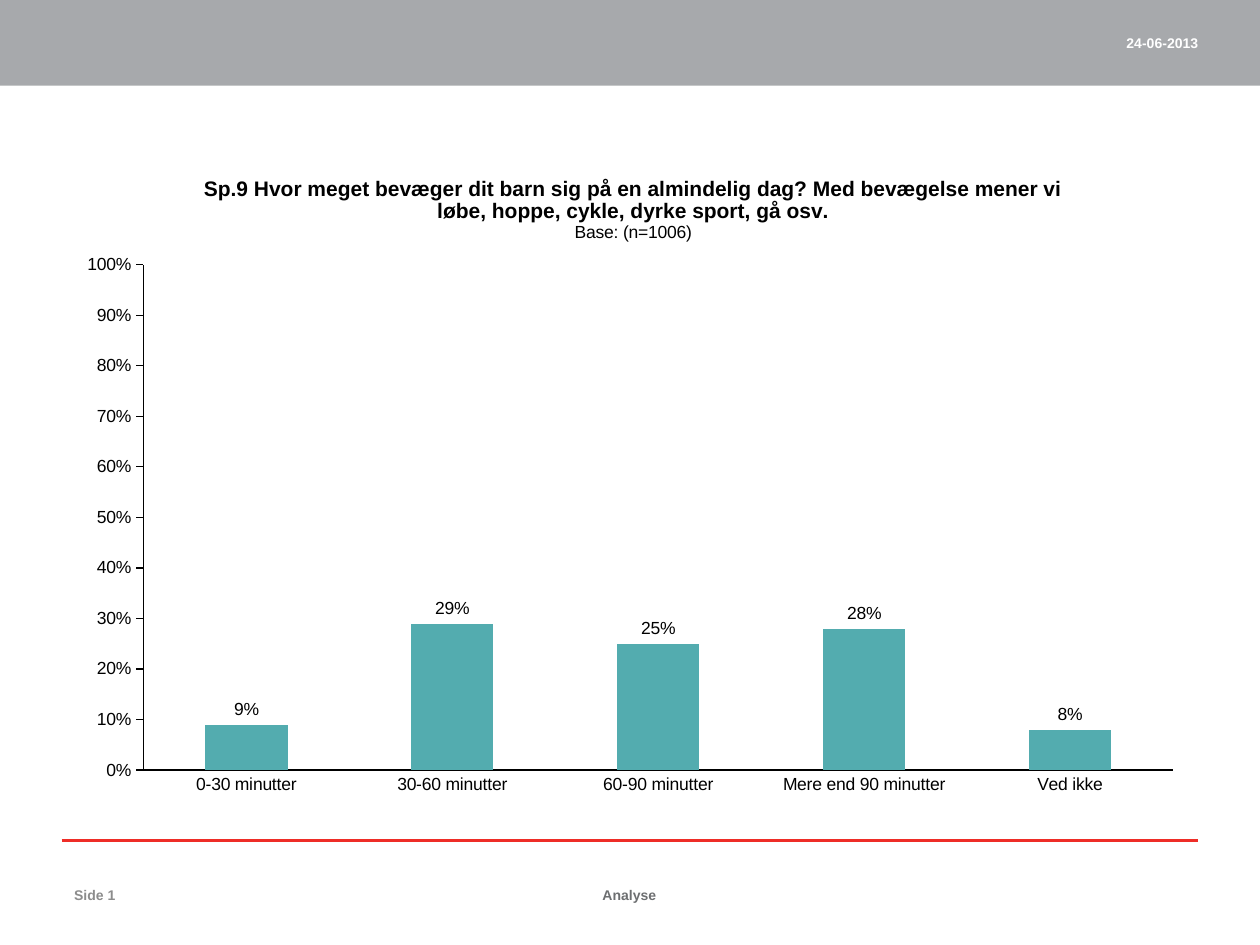
from dataclasses import dataclass

from lxml import etree
from pptx import Presentation
from pptx.chart.data import CategoryChartData
from pptx.dml.color import RGBColor
from pptx.enum.chart import XL_CHART_TYPE, XL_LABEL_POSITION, XL_TICK_MARK
from pptx.enum.shapes import MSO_CONNECTOR, MSO_SHAPE
from pptx.enum.text import MSO_ANCHOR, PP_ALIGN
from pptx.oxml.ns import qn
from pptx.util import Inches, Pt

COLUMNS = XL_CHART_TYPE.COLUMN_CLUSTERED
ABOVE_BAR = XL_LABEL_POSITION.OUTSIDE_END
NO_TICK = XL_TICK_MARK.NONE
OUTER_TICK = XL_TICK_MARK.OUTSIDE
STRAIGHT = MSO_CONNECTOR.STRAIGHT
RECTANGLE = MSO_SHAPE.RECTANGLE
MIDDLE = MSO_ANCHOR.MIDDLE
LEFT, CENTER, RIGHT = PP_ALIGN.LEFT, PP_ALIGN.CENTER, PP_ALIGN.RIGHT

BLACK = RGBColor(0x00, 0x00, 0x00)
WHITE = RGBColor(0xFF, 0xFF, 0xFF)
BAND_GRAY = RGBColor(0xA7, 0xA9, 0xAC)
RULE_RED = RGBColor(0xEE, 0x2D, 0x27)
FOOTER_GRAY = RGBColor(0x6D, 0x6F, 0x71)
PAGE_GRAY = RGBColor(0x8C, 0x8C, 0x8C)
BAR_TEAL = RGBColor(0x53, 0xAC, 0xAF)
FONT = "Arial"
PERCENT = "0%"


@dataclass(frozen=True)
class Marginal:
    text: str
    left: float
    top: float
    width: float
    color: RGBColor
    align: PP_ALIGN


@dataclass(frozen=True)
class TitleLine:
    text: str
    size: float
    bold: bool


MARGINALS = (
    Marginal("24-06-2013", 7.28, 0.14, 2.33, WHITE, RIGHT),
    Marginal("Analyse", 3.89, 6.9, 2.21, FOOTER_GRAY, CENTER),
    Marginal("Side 1", 0.49, 6.9, 2.33, PAGE_GRAY, LEFT),
)
QUESTION = (
    TitleLine("Sp.9 Hvor meget bevæger dit barn sig på en almindelig dag? "
              "Med bevægelse mener vi", 12, True),
    TitleLine("løbe, hoppe, cykle, dyrke sport, gå osv.", 12, True),
    TitleLine("Base: (n=1006)", 10, False),
)
ANSWERS = {
    "0-30 minutter": 0.09,
    "30-60 minutter": 0.29,
    "60-90 minutter": 0.25,
    "Mere end 90 minutter": 0.28,
    "Ved ikke": 0.08,
}


def style_font(font, size: float, color: RGBColor, bold: bool = False) -> None:
    font.name = FONT
    font.size = Pt(size)
    font.bold = bold
    font.color.rgb = color


def write_text(paragraph, text: str, *, size: float, color: RGBColor,
               bold: bool, align: PP_ALIGN) -> None:
    paragraph.alignment = align
    run = paragraph.add_run()
    run.text = text
    style_font(run.font, size, color, bold)


def add_marginal(slide, marginal: Marginal) -> None:
    box = slide.shapes.add_textbox(Inches(marginal.left), Inches(marginal.top),
                                   Inches(marginal.width), Inches(0.4))
    frame = box.text_frame
    frame.word_wrap = True
    frame.vertical_anchor = MIDDLE
    write_text(frame.paragraphs[0], marginal.text, size=8,
               color=marginal.color, bold=True, align=marginal.align)


def add_header_band(slide) -> None:
    band = slide.shapes.add_shape(RECTANGLE, 0, 0, Inches(10), Inches(0.68))
    band.shadow.inherit = False
    band.fill.solid()
    band.fill.fore_color.rgb = BAND_GRAY
    band.line.fill.background()


def add_footer_rule(slide) -> None:
    rule = slide.shapes.add_connector(STRAIGHT, Inches(0.49), Inches(6.67),
                                      Inches(9.51), Inches(6.67))
    rule.line.color.rgb = RULE_RED
    rule.line.width = Pt(1.5)
    etree.SubElement(rule._element.spPr, qn("a:effectLst"))


def place_part(part, index: int, **settings: object) -> None:
    for old in part.findall(qn("c:layout")):
        part.remove(old)
    layout = etree.Element(qn("c:layout"))
    manual = etree.SubElement(layout, qn("c:manualLayout"))
    for tag, value in settings.items():
        etree.SubElement(manual, qn(f"c:{tag}")).set("val", str(value))
    part.insert(index, layout)


def style_axis(axis, tick: XL_TICK_MARK) -> None:
    axis.has_major_gridlines = False
    axis.major_tick_mark = tick
    axis.minor_tick_mark = NO_TICK
    axis.format.line.color.rgb = BLACK
    axis.format.line.width = Pt(0.75)
    style_font(axis.tick_labels.font, 10, BLACK)


def add_title(chart) -> None:
    chart.has_title = True
    title = chart.chart_title
    title.include_in_layout = False
    frame = title.text_frame
    for index, line in enumerate(QUESTION):
        paragraph = frame.add_paragraph() if index else frame.paragraphs[0]
        write_text(paragraph, line.text, size=line.size, color=BLACK,
                   bold=line.bold, align=CENTER)
    place_part(title._element, 1, xMode="edge", yMode="edge", x=0.12, y=0.04)


def add_answer_chart(slide) -> None:
    answers = CategoryChartData(number_format=PERCENT)
    answers.categories = list(ANSWERS)
    answers.add_series("Series 1", list(ANSWERS.values()))
    chart = slide.shapes.add_chart(COLUMNS, Inches(0.51), Inches(1.15),
                                   Inches(8.98), Inches(5.28), answers).chart
    style_font(chart.font, 10, BLACK)
    chart.has_legend = False
    add_title(chart)

    style_axis(chart.category_axis, NO_TICK)
    share_axis = chart.value_axis
    style_axis(share_axis, OUTER_TICK)
    share_axis.minimum_scale = 0
    share_axis.maximum_scale = 1
    share_axis.major_unit = 0.1
    share_axis.tick_labels.number_format = PERCENT
    share_axis.tick_labels.number_format_is_linked = False

    plot = chart.plots[0]
    plot.vary_by_categories = False
    plot.gap_width = 150
    plot.overlap = -17
    shares = plot.series[0]
    shares.format.fill.solid()
    shares.format.fill.fore_color.rgb = BAR_TEAL
    labels = shares.data_labels
    labels.show_value = True
    labels.number_format = PERCENT
    labels.number_format_is_linked = False
    labels.position = ABOVE_BAR
    style_font(labels.font, 10, BLACK)

    plot_area = chart._chartSpace.find(f".//{qn('c:plotArea')}")
    place_part(plot_area, 0, layoutTarget="inner", xMode="edge", yMode="edge",
               x=0.07, y=0.18, w=0.91, h=0.76)


def main() -> None:
    deck = Presentation()
    deck.slide_width = Inches(10)
    deck.slide_height = Inches(7.5)
    slide = deck.slides.add_slide(deck.slide_layouts[6])
    add_header_band(slide)
    add_footer_rule(slide)
    for marginal in MARGINALS:
        add_marginal(slide, marginal)
    add_answer_chart(slide)
    deck.save("out.pptx")


if __name__ == "__main__":
    main()
